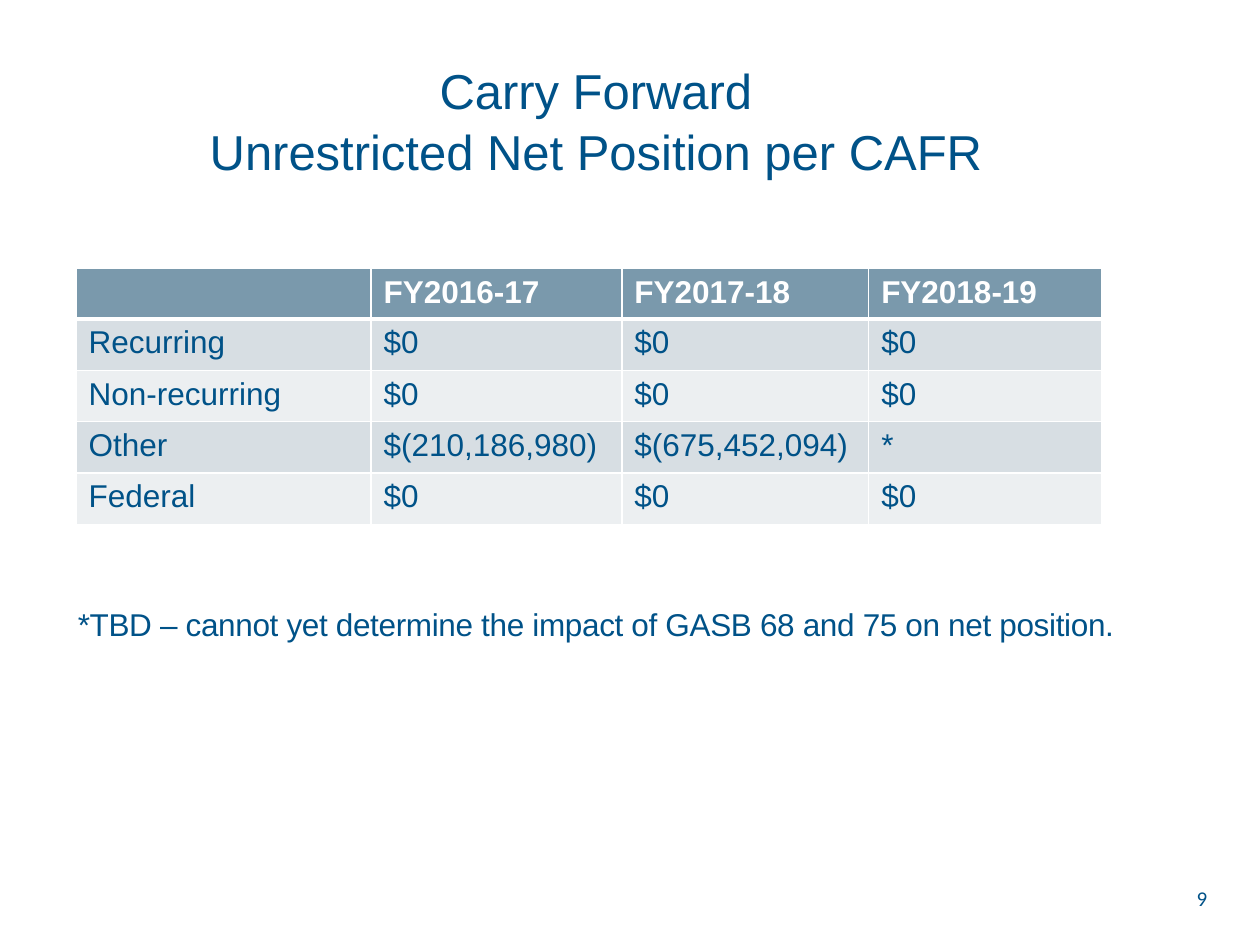
import pptx
import pptx.dml.color
import pptx.enum.text
import pptx.oxml
import pptx.util

Pt = pptx.util.Pt
RGBColor = pptx.dml.color.RGBColor
ALIGN = pptx.enum.text.PP_ALIGN
ANCHOR = pptx.enum.text.MSO_ANCHOR

NAVY = RGBColor(0x00, 0x52, 0x88)
WHITE = RGBColor(0xFF, 0xFF, 0xFF)
HEADER_FILL = RGBColor(0x7A, 0x99, 0xAC)
BAND_FILLS = (RGBColor(0xD7, 0xDE, 0xE3), RGBColor(0xEC, 0xEF, 0xF1))

COLUMN_WIDTHS = (168.5, 143.3, 141.1, 133.2)
HEADER_HEIGHT = 28
ROW_HEIGHT = 29.35
CARRY_FORWARD = (
    ("", "FY2016-17", "FY2017-18", "FY2018-19"),
    ("Recurring", "$0", "$0", "$0"),
    ("Non-recurring", "$0", "$0", "$0"),
    ("Other", "$(210,186,980)", "$(675,452,094)", "*"),
    ("Federal", "$0", "$0", "$0"),
)


def write_text(frame, text, size=18, font="Arial", color=NAVY, bold=False,
               align=ALIGN.LEFT, line_spacing=None, tracking=None):
    """Fill a text frame with one paragraph; tracking is in points."""
    paragraph = frame.paragraphs[0]
    paragraph.text = text
    paragraph.alignment = align
    if line_spacing:
        paragraph.line_spacing = line_spacing
    for run in paragraph.runs:
        run.font.size = Pt(size)
        run.font.name = font
        run.font.bold = bold
        run.font.color.rgb = color
        if tracking:
            run.font._element.set("spc", str(round(tracking * 100)))


def add_text_box(slide, box, text, anchor=ANCHOR.TOP, **text_format):
    shape = slide.shapes.add_textbox(*(Pt(length) for length in box))
    shape.text_frame.word_wrap = True
    shape.text_frame.vertical_anchor = anchor
    write_text(shape.text_frame, text, **text_format)


def set_borders(cell, bottom_width, top_width):
    properties = cell._tc.get_or_add_tcPr()
    widths = {"lnL": 1, "lnR": 1, "lnT": top_width, "lnB": bottom_width}
    for position, (side, width) in enumerate(widths.items()):
        properties.insert(position, pptx.oxml.parse_xml(
            f'<a:{side} xmlns:a="http://schemas.openxmlformats.org/drawingml/2006/main"'
            f' w="{Pt(width)}"><a:solidFill><a:srgbClr val="{WHITE}"/>'
            f'</a:solidFill></a:{side}>'))


def add_carry_forward_table(slide, left, top):
    height = HEADER_HEIGHT + ROW_HEIGHT * (len(CARRY_FORWARD) - 1)
    table = slide.shapes.add_table(
        len(CARRY_FORWARD), len(COLUMN_WIDTHS),
        Pt(left), Pt(top), Pt(sum(COLUMN_WIDTHS)), Pt(height)).table
    for column, width in zip(table.columns, COLUMN_WIDTHS):
        column.width = Pt(width)
    for row_index, values in enumerate(CARRY_FORWARD):
        is_header = row_index == 0
        table.rows[row_index].height = Pt(HEADER_HEIGHT if is_header else ROW_HEIGHT)
        for column_index, value in enumerate(values):
            cell = table.cell(row_index, column_index)
            cell.fill.solid()
            cell.fill.fore_color.rgb = (
                HEADER_FILL if is_header else BAND_FILLS[(row_index - 1) % 2])
            set_borders(cell, bottom_width=3 if is_header else 1,
                        top_width=3 if row_index == 1 else 1)
            write_text(cell.text_frame, value, bold=is_header,
                       color=WHITE if is_header else NAVY)


def build_carry_forward_slide(presentation):
    slide = presentation.slides.add_slide(presentation.slide_layouts[6])
    add_text_box(slide, (16.5, 23, 648, 90),
                 "Carry Forward\vUnrestricted Net Position per CAFR",
                 anchor=ANCHOR.MIDDLE, size=28, align=ALIGN.CENTER, line_spacing=1.05)
    add_carry_forward_table(slide, 43.5, 153.4)
    add_text_box(slide, (37.4, 342, 648, 30),
                 "*TBD – cannot yet determine the impact of GASB 68 and 75 on net position.",
                 tracking=-0.2)
    add_text_box(slide, (667.4, 502.6, 29.6, 28.8), "9",
                 size=12, font="Calibri", align=ALIGN.RIGHT)


def main():
    presentation = pptx.Presentation()
    presentation.slide_width = Pt(720)
    presentation.slide_height = Pt(540)
    build_carry_forward_slide(presentation)
    presentation.save("out.pptx")


if __name__ == "__main__":
    main()
